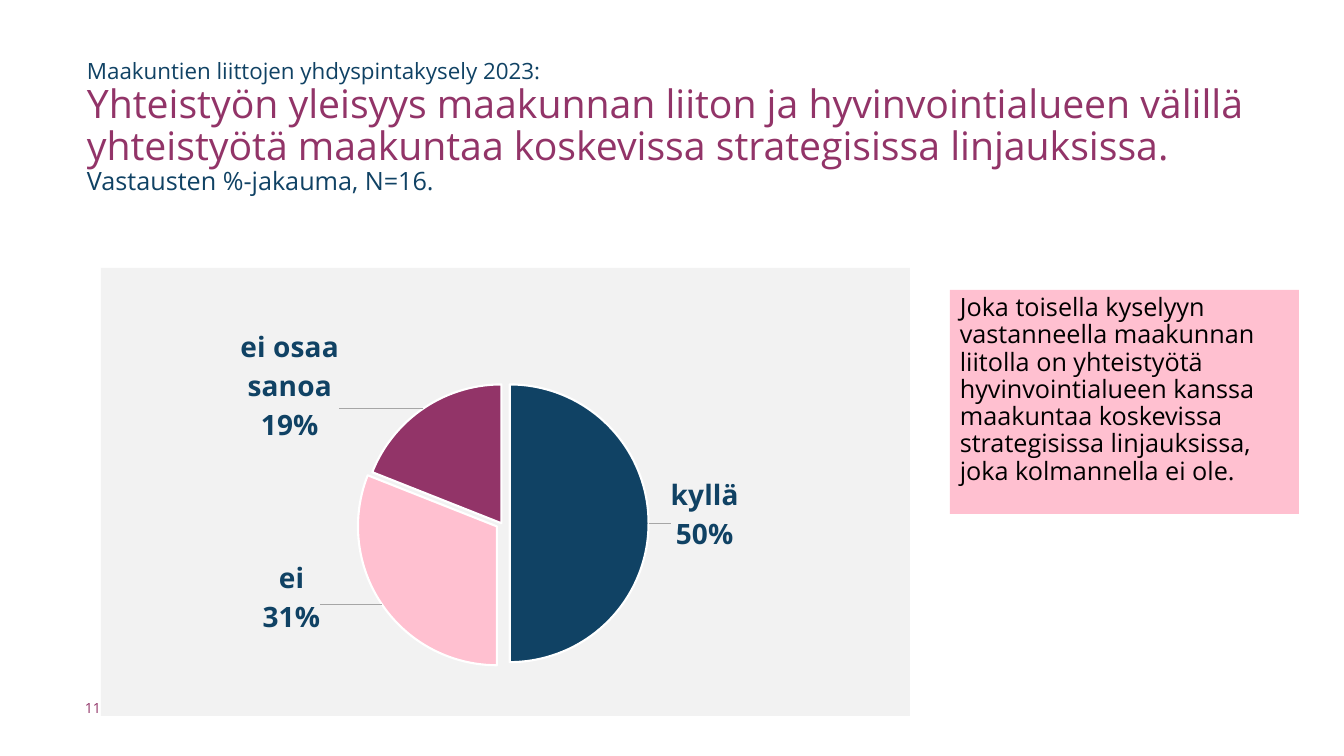
from copy import deepcopy

from pptx import Presentation
from pptx.chart.data import CategoryChartData
from pptx.dml.color import RGBColor
from pptx.enum.chart import XL_CHART_TYPE as ChartType, XL_LABEL_POSITION as LabelPosition
from pptx.enum.shapes import MSO_SHAPE as Preset
from pptx.enum.text import MSO_ANCHOR as Anchor, PP_ALIGN as Align
from pptx.oxml import parse_xml
from pptx.oxml.ns import nsdecls, qn
from pptx.util import Emu, Pt

FONT = "Open Sans"
NAVY = RGBColor(0x10, 0x42, 0x64)
PLUM = RGBColor(0x92, 0x34, 0x68)
PINK = RGBColor(0xFF, 0xC0, 0xD0)
GREY = RGBColor(0xF2, 0xF2, 0xF2)
RULE = RGBColor(0xA6, 0xA6, 0xA6)
BLACK = RGBColor(0, 0, 0)
WHITE = RGBColor(0xFF, 0xFF, 0xFF)

TITLE = [
    ("Maakuntien liittojen yhdyspintakysely 2023:", 16, NAVY),
    ("Yhteistyön yleisyys maakunnan liiton ja hyvinvointialueen välillä "
     "yhteistyötä maakuntaa koskevissa strategisissa linjauksissa. ", 28, PLUM),
    ("Vastausten %-jakauma, N=16.", 18, NAVY),
]
SUMMARY = (
    "Joka toisella kyselyyn vastanneella maakunnan liitolla on yhteistyötä "
    "hyvinvointialueen kanssa maakuntaa koskevissa strategisissa linjauksissa, "
    "joka kolmannella ei ole."
)
SLICES = [
    ("kyllä", 50, NAVY, 6, (0.02, -0.02)),
    ("ei", 31, PINK, 4, (-0.07, -0.11)),
    ("ei osaa sanoa", 19, PLUM, 0, (-0.1, 0.09)),
]


def px(*lengths):
    """Turn pixel lengths into EMU."""
    return [Emu(round(length * 914400 / 100.8)) for length in lengths]


def style_font(font, size, color, bold=False):
    """Set the face, size, colour and weight of a font."""
    font.name, font.size, font.bold = FONT, Pt(size), bold
    font.color.rgb = color


def add_text_box(page, bounds, anchor):
    """Add a wrapping text box without insets and return its frame."""
    frame = page.shapes.add_textbox(*px(*bounds)).text_frame
    frame.word_wrap = True
    frame.vertical_anchor = anchor
    frame.margin_left = frame.margin_top = frame.margin_right = frame.margin_bottom = 0
    return frame


def add_title(page):
    """Add the heading with its three text styles."""
    para = add_text_box(page, (87, 60, 1175, 111), Anchor.TOP).paragraphs[0]
    para.line_spacing = 0.9
    for index, (words, size, color) in enumerate(TITLE):
        if index == 1:
            para.add_line_break()
        span = para.add_run()
        span.text = words
        style_font(span.font, size, color)


def add_page_number(page):
    """Add the page number at the lower left."""
    frame = add_text_box(page, (85, 696, 47, 24), Anchor.MIDDLE)
    frame.text = "11"
    style_font(frame.paragraphs[0].runs[0].font, 10, PLUM)


def add_summary(page):
    """Add the pink box that sums up the result."""
    box = page.shapes.add_shape(Preset.RECTANGLE, *px(950, 290, 349, 224))
    box.shadow.inherit = False
    box.fill.solid()
    box.fill.fore_color.rgb = PINK
    box.line.fill.background()
    frame = box.text_frame
    frame.word_wrap = True
    frame.vertical_anchor = Anchor.TOP
    frame.text = SUMMARY
    para = frame.paragraphs[0]
    para.alignment = Align.LEFT
    para.line_spacing = 0.9
    style_font(para.runs[0].font, 18, BLACK)


def manual_layout(x, y, extra=""):
    """Return the XML of a manual chart layout."""
    return (f'<c:layout {nsdecls("c")}><c:manualLayout>{extra}'
            f'<c:x val="{x}"/><c:y val="{y}"/></c:manualLayout></c:layout>')


def place_plot(chart):
    """Fix the plot area and fill the chart background."""
    plot_area = chart._chartSpace.chart.plotArea
    for old in plot_area.findall(qn("c:layout")):
        plot_area.remove(old)
    modes = '<c:layoutTarget val="inner"/><c:xMode val="edge"/><c:yMode val="edge"/>'
    layout = parse_xml(manual_layout(0.32, 0.26, modes))
    for tag, share in (("w", 0.35), ("h", 0.62)):
        layout[0].append(parse_xml(f'<c:{tag} {nsdecls("c")} val="{share}"/>'))
    plot_area.insert(0, layout)
    chart._chartSpace.chart.addnext(parse_xml(
        f'<c:spPr {nsdecls("c", "a")}><a:solidFill><a:srgbClr val="{GREY}"/></a:solidFill>'
        '<a:ln><a:noFill/></a:ln></c:spPr>'))


def style_slices(series):
    """Colour each slice and pull it away from the centre."""
    for index, (_, _, color, distance, _) in enumerate(SLICES):
        look = series.points[index].format
        look.fill.solid()
        look.fill.fore_color.rgb = color
        look.line.color.rgb = WHITE
        look.line.width = Pt(1.5)
        slice_xml = series._element.findall(qn("c:dPt"))[index]
        slice_xml.find(qn("c:spPr")).addprevious(
            parse_xml(f'<c:explosion {nsdecls("c")} val="{distance}"/>'))


def label_slices(series):
    """Show category and percentage beside each slice with leader lines."""
    labels = series.data_labels
    style_font(labels.font, 20, NAVY, bold=True)
    labels.number_format, labels.number_format_is_linked = "0%", False
    labels.position = LabelPosition.OUTSIDE_END
    labels.show_value = False
    labels.show_category_name = labels.show_percentage = True
    group = labels._element
    group.find(qn("c:showBubbleSize")).addnext(
        parse_xml(f'<c:separator {nsdecls("c")}>\n</c:separator>'))
    shared = [child for child in group if child.tag != qn("c:showLeaderLines")]
    for index, (_, _, _, _, shift) in enumerate(SLICES):
        label = parse_xml(f'<c:dLbl {nsdecls("c")}><c:idx val="{index}"/></c:dLbl>')
        label.append(parse_xml(manual_layout(*shift)))
        label.extend(deepcopy(child) for child in shared)
        group.insert(index, label)
    for old in group.findall(qn("c:showLeaderLines")):
        group.remove(old)
    group.append(parse_xml(f'<c:showLeaderLines {nsdecls("c")} val="1"/>'))
    group.append(parse_xml(
        f'<c:leaderLines {nsdecls("c", "a")}><c:spPr><a:ln w="9525"><a:solidFill>'
        f'<a:srgbClr val="{RULE}"/></a:solidFill></a:ln></c:spPr></c:leaderLines>'))


def add_pie(page):
    """Add the pie chart of the answers."""
    answers = CategoryChartData()
    answers.categories = [item[0] for item in SLICES]
    answers.add_series("Series 1", [item[1] for item in SLICES])
    chart = page.shapes.add_chart(ChartType.PIE, *px(101, 268, 809, 448), answers).chart
    chart.has_title = chart.has_legend = False
    style_font(chart.font, 10, BLACK)
    chart.plots[0].vary_by_categories = True
    series = chart.plots[0].series[0]
    place_plot(chart)
    style_slices(series)
    label_slices(series)


def main():
    """Build the slide and save it."""
    deck = Presentation()
    deck.slide_width, deck.slide_height = px(1344, 756)
    page = deck.slides.add_slide(deck.slide_layouts[6])
    add_title(page)
    add_pie(page)
    add_page_number(page)
    add_summary(page)
    deck.save("out.pptx")


if __name__ == "__main__":
    main()
